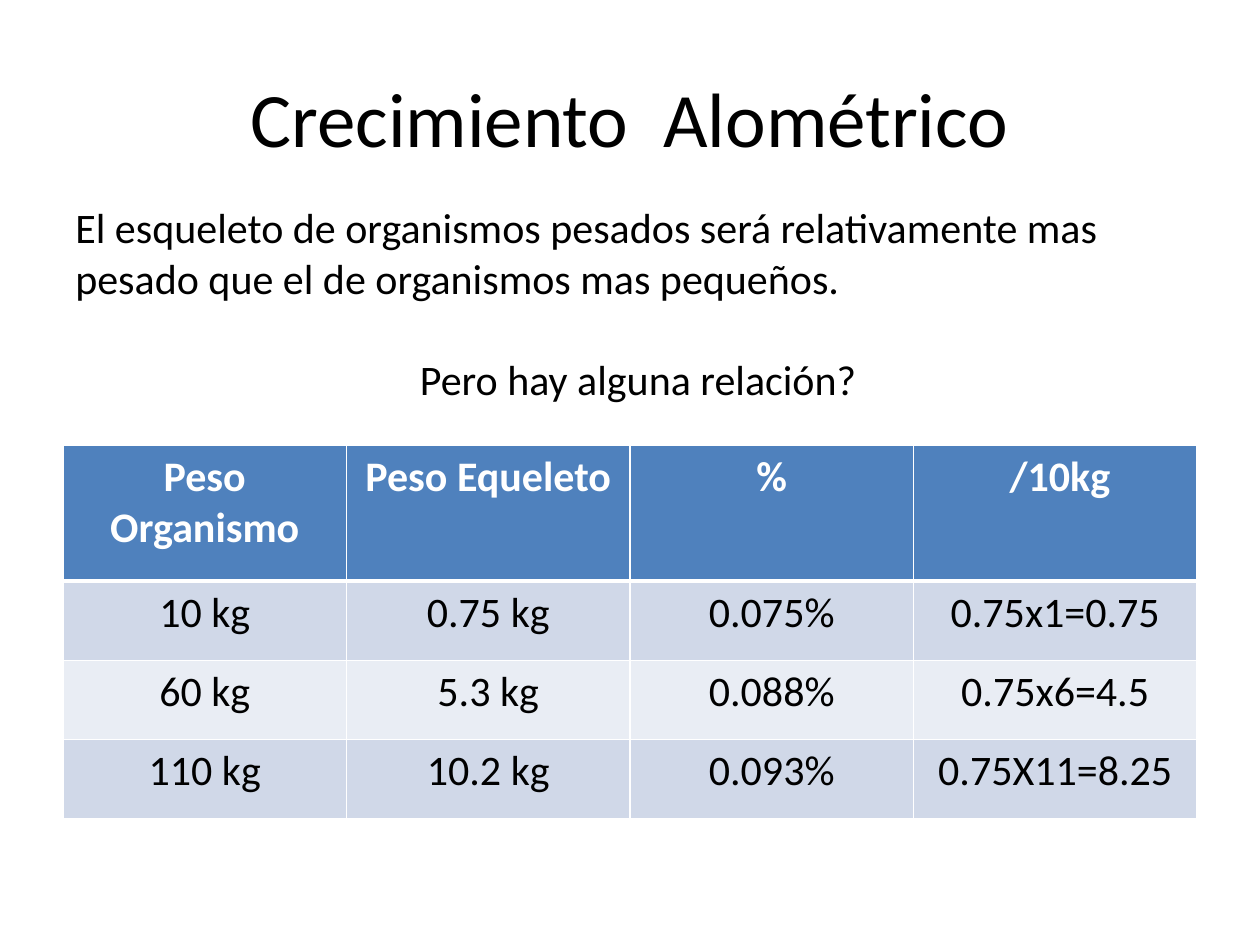
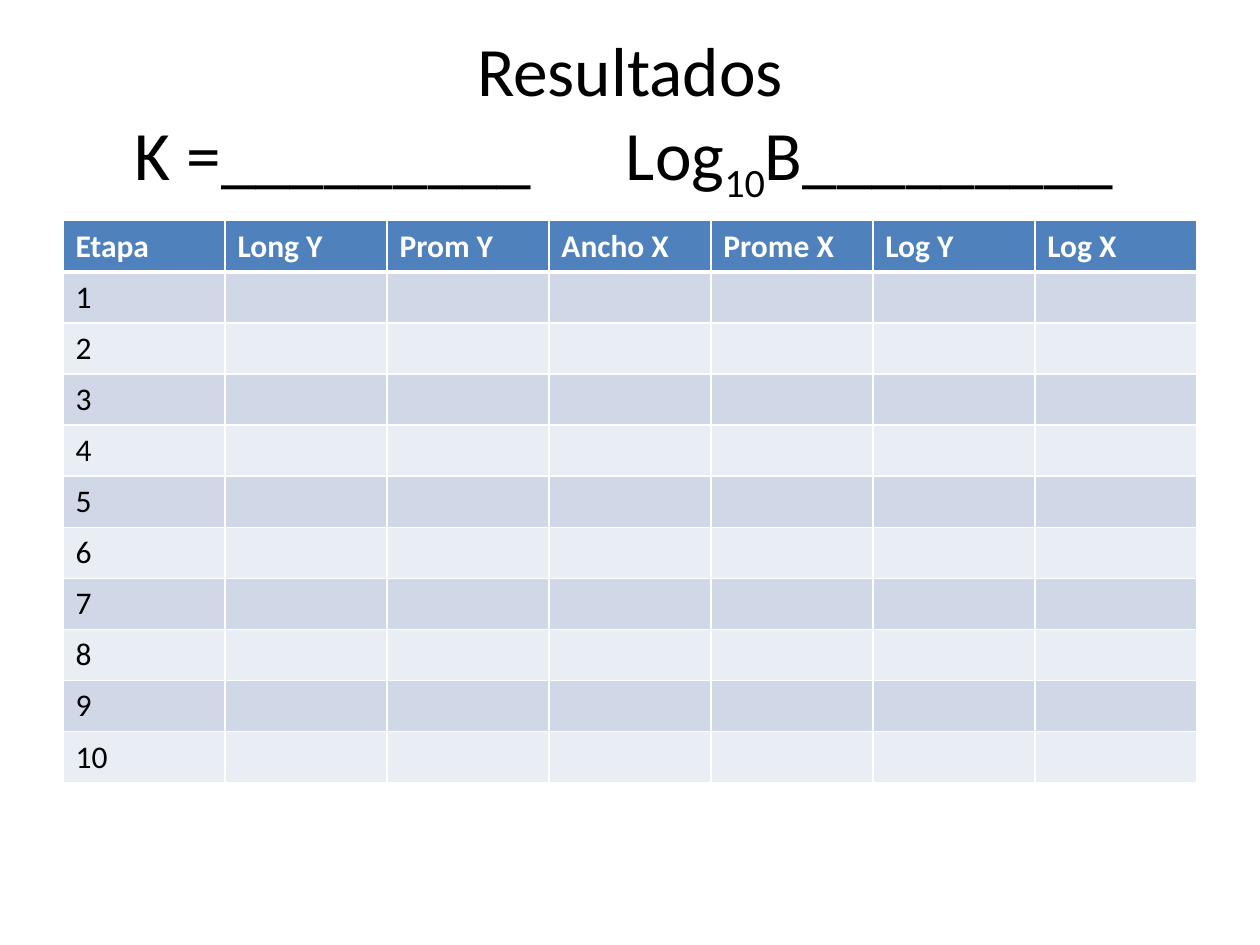
from dataclasses import dataclass

from lxml import etree
from pptx import Presentation
from pptx.dml.color import RGBColor
from pptx.enum.text import MSO_ANCHOR, PP_ALIGN
from pptx.oxml.ns import qn
from pptx.util import Cm, Pt

LEFT, CENTER = PP_ALIGN.LEFT, PP_ALIGN.CENTER
TOP, MIDDLE = MSO_ANCHOR.TOP, MSO_ANCHOR.MIDDLE
FONT = "Calibri"
BLACK, WHITE = "000000", "FFFFFF"
HEADER_FILL = "4F81BD"
BAND_FILLS = ("E9EDF4", "D0D8E8")
MARGIN, CONTENT_WIDTH = 1.27, 22.86
THIN, THICK = 1, 3


@dataclass
class Piece:
    text: str
    baseline: int = 0


@dataclass
class Line:
    pieces: list[Piece]
    align: PP_ALIGN = LEFT
    space_before: float = 0
    tab_stops: tuple[float, ...] = ()


@dataclass
class TextBlock:
    lines: list[Line]
    size: float
    top: float = 0.76
    width: float = CONTENT_WIDTH
    height: float = 3.18
    anchor: MSO_ANCHOR = MIDDLE


@dataclass
class DataTable:
    rows: list[list[str]]
    top: float
    header_height: float
    row_height: float
    size: float
    align: PP_ALIGN


def rgb(value: str) -> RGBColor:
    """Turn a hex string into a colour."""
    return RGBColor.from_string(value)


def add_run(paragraph, text: str, size: float, color: str = BLACK, bold: bool = False):
    """Add one formatted run to a paragraph."""
    run = paragraph.add_run()
    run.text = text
    run.font.name = FONT
    run.font.size = Pt(size)
    run.font.bold = bold
    run.font.color.rgb = rgb(color)
    return run


def add_tab_stops(paragraph, stops: tuple[float, ...]) -> None:
    """Set left tab stops, given in centimetres."""
    tab_list = etree.SubElement(paragraph._p.get_or_add_pPr(), qn("a:tabLst"))
    for stop in stops:
        etree.SubElement(tab_list, qn("a:tab"), pos=str(Cm(stop)), algn="l")


def draw_text(slide, block: TextBlock) -> None:
    """Draw a block of text at the content margin."""
    box = slide.shapes.add_textbox(Cm(MARGIN), Cm(block.top), Cm(block.width), Cm(block.height))
    frame = box.text_frame
    frame.word_wrap = True
    frame.vertical_anchor = block.anchor
    for index, line in enumerate(block.lines):
        paragraph = frame.add_paragraph() if index else frame.paragraphs[0]
        paragraph.alignment = line.align
        paragraph.space_before = Pt(line.space_before)
        if line.tab_stops:
            add_tab_stops(paragraph, line.tab_stops)
        for piece in line.pieces:
            run = add_run(paragraph, piece.text, block.size)
            if piece.baseline:
                run.font._element.set("baseline", str(piece.baseline * 1000))


def set_borders(cell, top: float, bottom: float) -> None:
    """Give a cell white borders."""
    properties = cell._tc.get_or_add_tcPr()
    for side, width in (("L", THIN), ("R", THIN), ("T", top), ("B", bottom)):
        border = etree.SubElement(properties, qn(f"a:ln{side}"), w=str(Pt(width)))
        fill = etree.SubElement(border, qn("a:solidFill"))
        etree.SubElement(fill, qn("a:srgbClr"), val=WHITE)


def draw_table(slide, data: DataTable) -> None:
    """Draw a banded table with a header row and equal columns."""
    row_count, column_count = len(data.rows), len(data.rows[0])
    height = data.header_height + data.row_height * (row_count - 1)
    table = slide.shapes.add_table(
        row_count, column_count, Cm(MARGIN), Cm(data.top), Cm(CONTENT_WIDTH), Cm(height)
    ).table
    for column in table.columns:
        column.width = Cm(CONTENT_WIDTH / column_count)
    for r, values in enumerate(data.rows):
        is_header = r == 0
        table.rows[r].height = Cm(data.header_height if is_header else data.row_height)
        for c, value in enumerate(values):
            cell = table.cell(r, c)
            set_borders(cell, THICK if r == 1 else THIN, THICK if is_header else THIN)
            cell.fill.solid()
            cell.fill.fore_color.rgb = rgb(HEADER_FILL if is_header else BAND_FILLS[r % 2])
            paragraph = cell.text_frame.paragraphs[0]
            paragraph.alignment = data.align
            if value:
                add_run(paragraph, value, data.size, WHITE if is_header else BLACK, is_header)


GROWTH_TITLE = TextBlock([Line([Piece("Crecimiento  Alométrico")], CENTER)], size=44)
GROWTH_INTRO = TextBlock(
    [
        Line([Piece(
            "El esqueleto de organismos pesados será relativamente mas pesado "
            "que el de organismos mas pequeños."
        )]),
        Line([Piece("Pero hay alguna relación?")], CENTER, space_before=29),
    ],
    size=24, top=3.94, width=23.19, height=5.13, anchor=TOP,
)
WEIGHTS = DataTable(
    [
        ["Peso Organismo", "Peso Equeleto", "%", " /10kg"],
        ["10 kg", "0.75 kg", "0.075%", "0.75x1=0.75"],
        ["60 kg", "5.3 kg", "0.088%", "0.75x6=4.5"],
        ["110 kg", "10.2 kg", "0.093%", "0.75X11=8.25"],
    ],
    top=8.97, header_height=2.74, row_height=1.6, size=24, align=CENTER,
)
RESULTS_TITLE = TextBlock(
    [
        Line([Piece("Resultados")], CENTER),
        Line(
            [Piece("\tK =_________\tLog"), Piece("10", -25), Piece("B_________")],
            tab_stops=(1.2, 11.1),
        ),
    ],
    size=39.6,
)
STAGE_HEADERS = ["Etapa", "Long Y", "Prom Y", "Ancho X", "Prome X", "Log Y", "Log X"]
STAGES = DataTable(
    [STAGE_HEADERS]
    + [[str(stage)] + [""] * (len(STAGE_HEADERS) - 1) for stage in range(1, 11)],
    top=4.45, header_height=1.03, row_height=1.03, size=18, align=LEFT,
)
SLIDES = (
    ([GROWTH_TITLE, GROWTH_INTRO], WEIGHTS),
    ([RESULTS_TITLE], STAGES),
)


def main() -> None:
    """Build and save the presentation."""
    deck = Presentation()
    deck.slide_width, deck.slide_height = Cm(25.4), Cm(19.05)
    for blocks, data in SLIDES:
        slide = deck.slides.add_slide(deck.slide_layouts[6])
        for block in blocks:
            draw_text(slide, block)
        draw_table(slide, data)
    deck.save("out.pptx")


if __name__ == "__main__":
    main()
